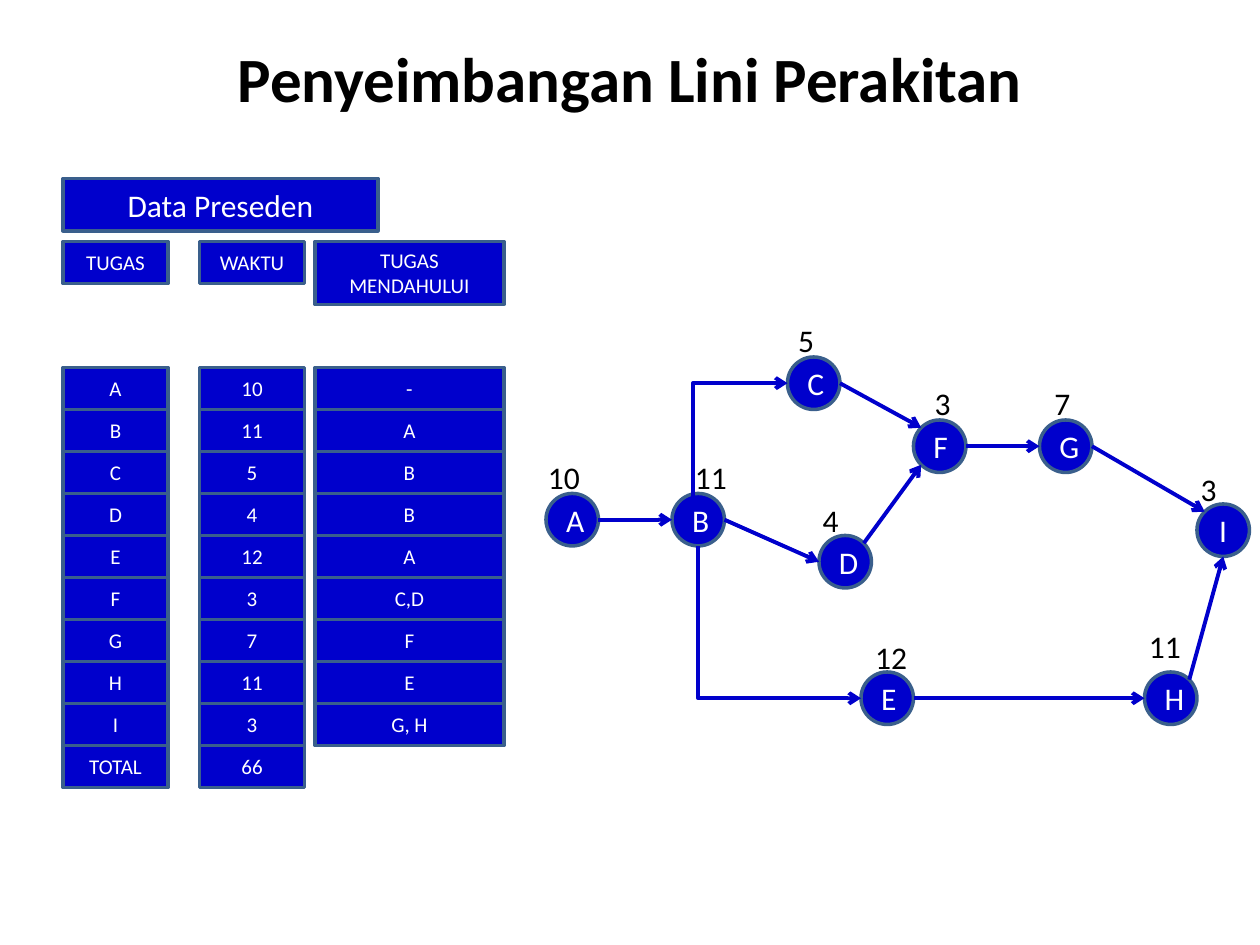
from dataclasses import dataclass

from lxml.etree import SubElement
from pptx import Presentation
from pptx.dml.color import RGBColor as Rgb
from pptx.enum.shapes import MSO_CONNECTOR as Link, MSO_SHAPE as Form
from pptx.enum.text import MSO_ANCHOR as Anchor, MSO_AUTO_SIZE as Fit, PP_ALIGN as Align
from pptx.oxml.ns import qn
from pptx.util import Pt


@dataclass(frozen=True)
class Theme:
    font: str = "Calibri"
    fill: Rgb = Rgb(0x00, 0x00, 0xCC)
    edge: Rgb = Rgb(0x3A, 0x5F, 0x8C)
    light: Rgb = Rgb(0xFF, 0xFF, 0xFF)
    dark: Rgb = Rgb(0x00, 0x00, 0x00)
    title: int = 36
    large: int = 18
    small: int = 12


theme = Theme()


def write(frame, text, size, color, align=Align.CENTER, bold=False):
    """Fill a text frame, one paragraph for each line of text."""
    for i, line in enumerate(text.split("\n")):
        para = frame.add_paragraph() if i else frame.paragraphs[0]
        para.alignment = align
        run = para.add_run()
        run.text = line
        run.font.name = theme.font
        run.font.size = Pt(size)
        run.font.bold = bold
        run.font.color.rgb = color


def block(form, left, top, width, height, text, size):
    """Add a filled, outlined shape with centred light text."""
    shape = slide.shapes.add_shape(form, Pt(left), Pt(top), Pt(width), Pt(height))
    shape.shadow.inherit = False
    shape.fill.solid()
    shape.fill.fore_color.rgb = theme.fill
    shape.line.color.rgb = theme.edge
    shape.line.width = Pt(2)
    shape.text_frame.vertical_anchor = Anchor.MIDDLE
    write(shape.text_frame, text, size, theme.light)


deck = Presentation()
deck.slide_width, deck.slide_height = Pt(720), Pt(540)
slide = deck.slides.add_slide(deck.slide_layouts[5])

title = slide.shapes.title
title.left, title.top, title.width, title.height = Pt(36), Pt(21.6), Pt(648), Pt(45)
title.text_frame.vertical_anchor = Anchor.MIDDLE
write(title.text_frame, "Penyeimbangan Lini Perakitan", theme.title, theme.dark, bold=True)

# Precedence data: left, width, header height, header, cells
block(Form.RECTANGLE, 36, 102, 180, 30, "Data Preseden", theme.large)
columns = [
    (36, 60, 24, "TUGAS", ["A", "B", "C", "D", "E", "F", "G", "H", "I", "TOTAL"]),
    (114, 60, 24, "WAKTU", ["10", "11", "5", "4", "12", "3", "7", "11", "3", "66"]),
    (180, 108, 36, "TUGAS\nMENDAHULUI", ["-", "A", "B", "B", "A", "C,D", "F", "E", "G, H"]),
]
row = 24
for left, width, height, head, cells in columns:
    block(Form.RECTANGLE, left, 138, width, height, head, theme.small)
    for i, cell in enumerate(cells):
        block(Form.RECTANGLE, left, 210 + i * row, width, row, cell, theme.small)

# Tasks: centre of the node, time, left, top and width of the time label
tasks = {
    "A": (327, 297, "10", 306, 258, 34.5),
    "B": (399, 297, "11", 390, 258, 33),
    "C": (465, 219, "5", 449, 180, 24.5),
    "D": (483, 321, "4", 463, 283, 24.5),
    "E": (507, 399, "12", 493, 361, 34.5),
    "F": (537, 255, "3", 527, 216, 24.5),
    "G": (609, 255, "7", 595.5, 216, 24.5),
    "H": (669, 399, "11", 649.5, 355, 33),
    "I": (699, 303, "3", 679, 265, 24.5),
}
radius = 15
for name, (x, y, *_) in tasks.items():
    block(Form.OVAL, x - radius, y - radius, 2 * radius, 2 * radius, name, theme.large)

# Offsets from a node's centre at which arrows start or end
diag = 10.6
sites = {
    "left": (-radius, 0), "right": (radius, 0), "bottom": (0, radius),
    "top": (-3, -12), "upleft": (-diag, -diag), "upright": (diag, -diag),
    "lowleft": (-diag, diag),
}
arrows = [
    ("A", "right", "B", "left", "elbow"),
    ("B", "top", "C", "left", "corner"),
    ("B", "bottom", "E", "left", "corner"),
    ("B", "right", "D", "left", "line"),
    ("C", "right", "F", "upleft", "line"),
    ("D", "upright", "F", "lowleft", "line"),
    ("F", "right", "G", "left", "line"),
    ("E", "right", "H", "left", "line"),
    ("G", "right", "I", "upleft", "line"),
    ("H", "upright", "I", "bottom", "line"),
]
for start, out, goal, into, kind in arrows:
    x1, y1 = (tasks[start][i] + sites[out][i] for i in (0, 1))
    x2, y2 = (tasks[goal][i] + sites[into][i] for i in (0, 1))
    up = y2 < y1
    if kind == "corner":
        # The frame is turned by a quarter, so its width and height swap
        midx, midy = (x1 + x2) / 2, (y1 + y2) / 2
        halfw, halfh = abs(y2 - y1) / 2, (x2 - x1) / 2 * (1 if up else -1)
        x1, y1, x2, y2 = midx + halfw, midy + halfh, midx - halfw, midy - halfh
    form = Link.STRAIGHT if kind == "line" else Link.ELBOW
    arrow = slide.shapes.add_connector(form, Pt(x1), Pt(y1), Pt(x2), Pt(y2))
    arrow.line.color.rgb = theme.fill
    arrow.line.width = Pt(2.25)
    props = arrow.element.spPr
    SubElement(props.find(qn("a:ln")), qn("a:tailEnd"), type="arrow")
    SubElement(props, qn("a:effectLst"))
    if kind == "corner":
        props.find(qn("a:prstGeom")).set("prst", "bentConnector2")
        props.find(qn("a:xfrm")).set("rot", str((90 if up else 270) * 60000))

for _, _, time, left, top, width in tasks.values():
    label = slide.shapes.add_textbox(Pt(left), Pt(top), Pt(width), Pt(29))
    label.text_frame.word_wrap = False
    label.text_frame.auto_size = Fit.SHAPE_TO_FIT_TEXT
    write(label.text_frame, time, theme.large, theme.dark, Align.LEFT)

deck.save("out.pptx")
